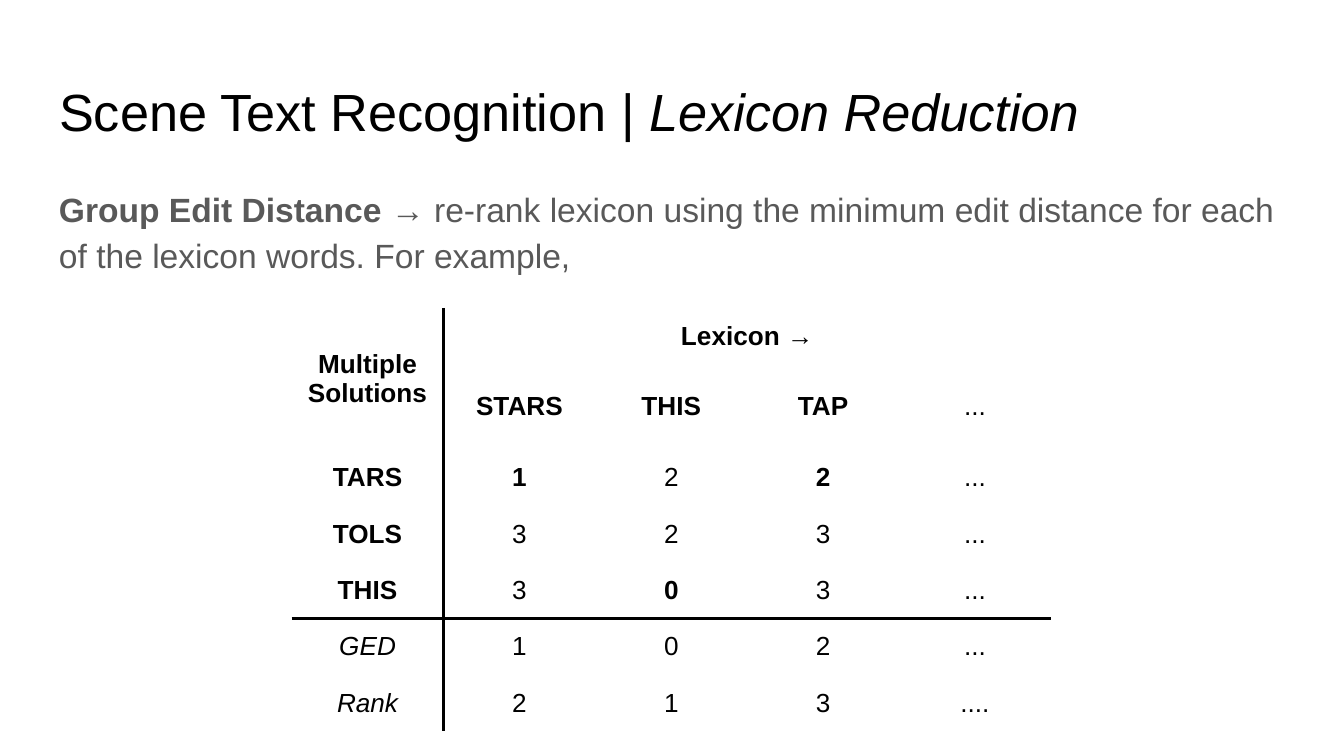
import lxml.etree
import pptx
import pptx.dml.color
import pptx.enum.text
import pptx.oxml.ns
import pptx.util

Inches = pptx.util.Inches
Pt = pptx.util.Pt
FONT = "Arial"
BLACK = "000000"
GRAY = "595959"
ROWS = [
    ["Multiple Solutions", "Lexicon →", "", "", ""],
    ["", "STARS", "THIS", "TAP", "..."],
    ["TARS", "1", "2", "2", "..."],
    ["TOLS", "3", "2", "3", "..."],
    ["THIS", "3", "0", "3", "..."],
    ["GED", "1", "0", "2", "..."],
    ["Rank", "2", "1", "3", "...."],
]
FIRST_SUMMARY_ROW = 5
CLOSEST_MATCHES = {(2, 1), (2, 3), (4, 2)}


def set_font(font, size, color):
    font.name = FONT
    font.size = Pt(size)
    font.color.rgb = pptx.dml.color.RGBColor.from_string(color)


def set_margins(item):
    item.margin_left = item.margin_right = Inches(0.1)
    item.margin_top = item.margin_bottom = Inches(0.1)


def fill_text(shape, box, runs, size, color):
    shape.left, shape.top, shape.width, shape.height = map(Inches, box)
    frame = shape.text_frame
    frame.word_wrap = True
    frame.auto_size = pptx.enum.text.MSO_AUTO_SIZE.NONE
    frame.vertical_anchor = pptx.enum.text.MSO_ANCHOR.TOP
    set_margins(frame)
    paragraph = frame.paragraphs[0]
    paragraph.alignment = pptx.enum.text.PP_ALIGN.LEFT
    set_font(paragraph.font, size, color)
    for text, bold, italic in runs:
        run = paragraph.add_run()
        run.text = text
        set_font(run.font, size, color)
        run.font.bold = bold
        run.font.italic = italic
    return paragraph


def add_title(slide, box):
    runs = [("Scene Text Recognition | ", False, False),
            ("Lexicon Reduction", False, True)]
    fill_text(slide.shapes.title, box, runs, 28, BLACK)


def add_explanation(slide, box):
    runs = [
        ("Group Edit Distance ", True, False),
        ("→ re-rank lexicon using the minimum edit distance for each "
         "of the lexicon words. For example,", False, False),
    ]
    shape = slide.shapes.add_textbox(*map(Inches, box))
    paragraph = fill_text(shape, box, runs, 18, GRAY)
    paragraph.line_spacing = 1.15
    paragraph.space_after = Pt(16)


def add_border(cell, side, drawn, color, width):
    properties = cell._tc.get_or_add_tcPr()
    qn = pptx.oxml.ns.qn
    line = lxml.etree.SubElement(properties, qn("a:ln" + side), w=str(Pt(width)))
    if drawn:
        fill = lxml.etree.SubElement(line, qn("a:solidFill"))
        lxml.etree.SubElement(fill, qn("a:srgbClr"), val=color)
    else:
        lxml.etree.SubElement(line, qn("a:noFill"))


def format_cell(cell, row, column):
    sides = {
        "L": column == 1,
        "R": column == 0,
        "T": row == FIRST_SUMMARY_ROW,
        "B": row == FIRST_SUMMARY_ROW - 1,
    }
    for side, drawn in sides.items():
        add_border(cell, side, drawn, BLACK, 1.5)
    cell.fill.background()
    cell.vertical_anchor = pptx.enum.text.MSO_ANCHOR.MIDDLE
    set_margins(cell)
    text = ROWS[row][column]
    cell.text = text
    paragraph = cell.text_frame.paragraphs[0]
    paragraph.alignment = pptx.enum.text.PP_ALIGN.CENTER
    set_font(paragraph.font, 14, BLACK)
    summary = row >= FIRST_SUMMARY_ROW
    heading = not summary and (row < 2 or column == 0) and text != "..."
    paragraph.font.bold = heading or (row, column) in CLOSEST_MATCHES
    paragraph.font.italic = summary and column == 0


def add_distance_table(slide, box):
    row_count, column_count = len(ROWS), len(ROWS[0])
    frame = slide.shapes.add_table(row_count, column_count, *map(Inches, box))
    table = frame.table
    table.first_row = False
    table.horz_banding = False
    for column in table.columns:
        column.width = Inches(box[2] / column_count)
    for row in table.rows:
        row.height = Inches(box[3] / row_count)
    table.cell(0, 0).merge(table.cell(1, 0))
    table.cell(0, 1).merge(table.cell(0, 4))
    for row in range(row_count):
        for column in range(column_count):
            format_cell(table.cell(row, column), row, column)


def main():
    presentation = pptx.Presentation()
    presentation.slide_width = Inches(10)
    presentation.slide_height = presentation.slide_width * 9 // 16
    slide = presentation.slides.add_slide(presentation.slide_layouts[5])
    add_title(slide, (0.34, 0.49, 9.32, 0.63))
    add_explanation(slide, (0.34, 1.26, 9.32, 1.03))
    add_distance_table(slide, (2.17, 2.29, 5.65, 2.92))
    presentation.save("out.pptx")


if __name__ == "__main__":
    main()
